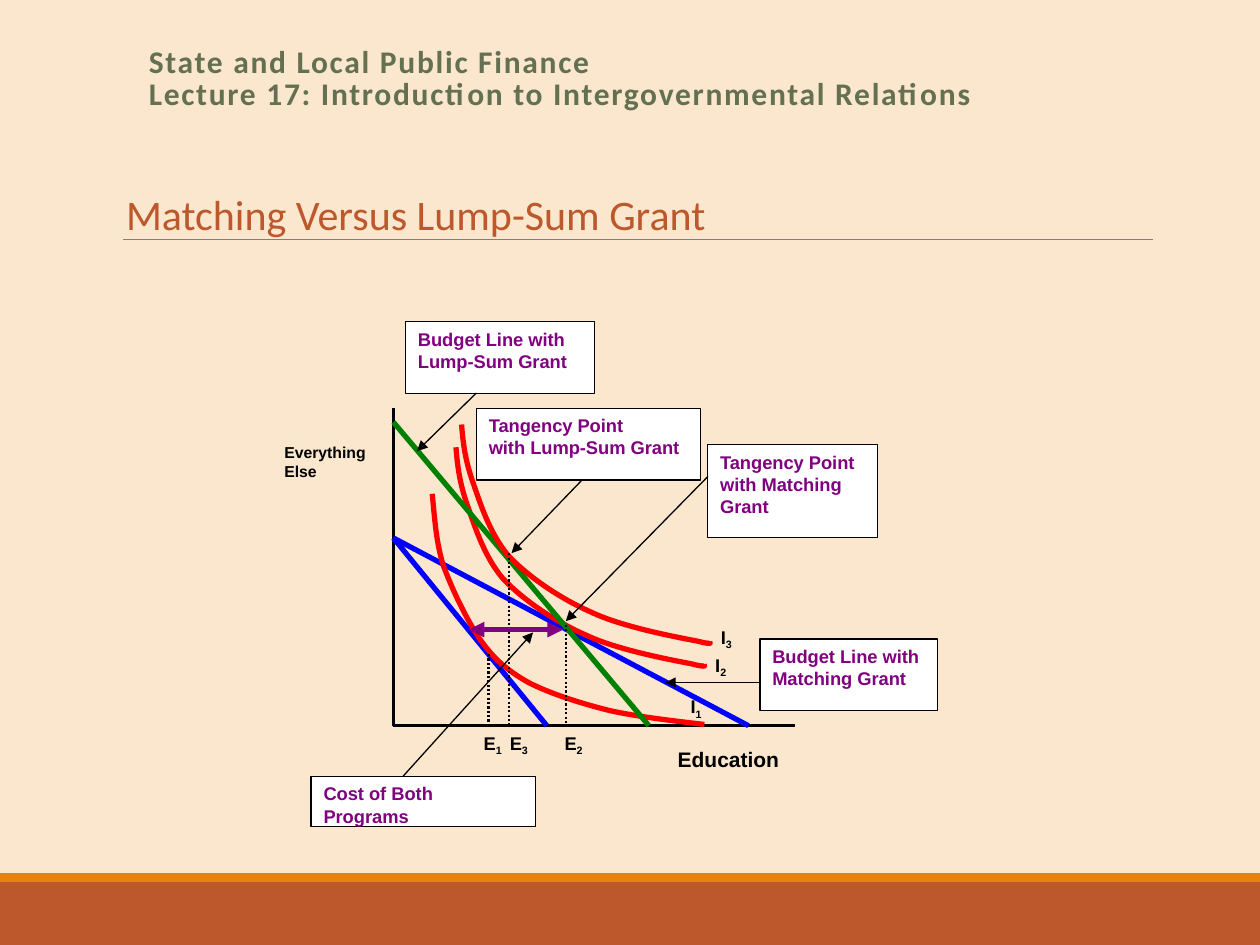
import dataclasses
import pptx
import pptx.util
import pptx.dml.color
import pptx.enum.dml
import pptx.enum.shapes
import pptx.enum.text
import pptx.oxml.ns
import lxml.etree

Pt = pptx.util.Pt
Shape = pptx.enum.shapes.MSO_SHAPE
Anchor = pptx.enum.text.MSO_ANCHOR
Align = pptx.enum.text.PP_ALIGN


@dataclasses.dataclass(frozen=True)
class Theme:
    paper: str = "FBE6CE"
    rust: str = "BD582C"
    orange: str = "E48312"
    olive: str = "637052"
    gray: str = "808080"
    black: str = "000000"
    white: str = "FFFFFF"
    blue: str = "0000FF"
    green: str = "008000"
    red: str = "FF0000"
    purple: str = "800080"
    head: float = 18
    topic: float = 24
    axis: float = 12
    note: float = 10.5
    small: float = 9
    serif: str = "Calibri"
    sans: str = "Arial"


T = Theme()
LEFT, BASE = 224.8, 414.7
KINK = 307.4
LOW = [(247, 282.2), (248.4, 295.9), (249.1, 309.6), (253.4, 323.3),
       (258.5, 337), (266.4, 353.5), (273.6, 364.3),
       (281.5, 375.8), (288.7, 382.3), (301, 389.5),
       (313.2, 396), (331.2, 401.8), (348.5, 406.1),
       (365, 409.7), (383.8, 411.8), (402.5, 414)]
MID = [(260.6, 255.6), (261.4, 266.4), (262.8, 276.5), (267.1, 288.7),
       (271.4, 301), (276.5, 317.5), (287.3, 330.5),
       (298.8, 342.7), (316.8, 355), (334.8, 362.9),
       (352.8, 371.5), (384.5, 377.3), (395.3, 379.4),
       (406.8, 382.3), (401, 379.4), (402.5, 379.4)]
HIGH = [(x + 3.2, y - 13) for x, y in MID]


def color(code):
    return pptx.dml.color.RGBColor.from_string(code)


def child(node, tag, **attrs):
    return lxml.etree.SubElement(node, pptx.oxml.ns.qn(tag), attrs)


def style(font, size, code, name=T.sans, bold=True):
    font.size, font.name, font.bold = Pt(size), name, bold
    font.color.rgb = color(code)


def place(shape, x, y, w, h):
    shape.left, shape.top, shape.width, shape.height = map(Pt, (x, y, w, h))


def rect(slide, x, y, w, h, fill, edge=None):
    shape = slide.shapes.add_shape(Shape.RECTANGLE, *map(Pt, (x, y, w, h)))
    shape.shadow.inherit = False
    shape.fill.solid()
    shape.fill.fore_color.rgb = color(fill)
    if edge:
        shape.line.color.rgb = color(edge)
        shape.line.width = Pt(0.75)
    else:
        shape.line.fill.background()
    return shape


def line(slide, start, end, code, width, dots=False, head=False, tail=False):
    link = slide.shapes.add_connector(
        pptx.enum.shapes.MSO_CONNECTOR.STRAIGHT, *map(Pt, (*start, *end)))
    link.line.color.rgb = color(code)
    link.line.width = Pt(width)
    if dots:
        link.line.dash_style = pptx.enum.dml.MSO_LINE.ROUND_DOT
    stroke = link.line._get_or_add_ln()
    if head:
        child(stroke, "a:headEnd", type="triangle")
    if tail:
        child(stroke, "a:tailEnd", type="triangle")
    child(link._element.spPr, "a:effectLst")
    return link


def bend(shape):
    legs = list(shape._element.iter(pptx.oxml.ns.qn("a:lnTo")))
    track = legs[0].getparent()
    for i in range(0, len(legs), 3):
        arc = child(track, "a:cubicBezTo")
        for leg in legs[i:i + 3]:
            arc.append(leg[0])
            track.remove(leg)


def curve(slide, knots):
    spots = [(Pt(x), Pt(y)) for x, y in knots]
    pen = slide.shapes.build_freeform(*spots[0], scale=1.0)
    pen.add_line_segments(spots[1:], close=False)
    shape = pen.convert_to_shape()
    bend(shape)
    shape.shadow.inherit = False
    shape.fill.background()
    shape.line.color.rgb = color(T.red)
    shape.line.width = Pt(3)


def write(frame, text, size, code):
    frame.word_wrap = True
    frame.vertical_anchor = Anchor.TOP
    frame.text = text
    for para in frame.paragraphs:
        para.alignment = Align.LEFT
        style(para.font, size, code)


def label(slide, x, y, w, h, text, size, sub=None):
    frame = slide.shapes.add_textbox(*map(Pt, (x, y, w, h))).text_frame
    write(frame, text, size, T.black)
    if sub:
        run = frame.paragraphs[0].add_run()
        run.text = sub
        run._r.get_or_add_rPr().set("baseline", "-25000")


def note(slide, x, y, w, h, text):
    box = rect(slide, x, y, w, h, T.white, T.black)
    write(box.text_frame, text, T.note, T.purple)


def decor(slide):
    parts = (rect(slide, 0, 504, 720, 36, T.rust),
             rect(slide, 0, 499, 720, 5, T.orange),
             line(slide, (70.4, 136.8), (658.8, 136.8), T.gray, 0.5))
    tree = slide.slide_layout.shapes._spTree
    for part in parts:
        tree.append(part._element)


def heads(slide):
    title, body = slide.placeholders
    place(title, 77.8, 23.8, 594, 46.8)
    place(body, 64.8, 82.1, 347, 58.3)
    for shape, anchor in ((title, Anchor.TOP), (body, Anchor.BOTTOM)):
        frame = shape.text_frame
        frame.word_wrap = True
        frame.auto_size = pptx.enum.text.MSO_AUTO_SIZE.NONE
        frame.vertical_anchor = anchor
        frame.paragraphs[0].alignment = Align.LEFT
        frame.paragraphs[0].space_before = Pt(0)
    para = title.text_frame.paragraphs[0]
    para.text = ("State and Local Public Finance\v"
                 "Lecture 17: Introduction to Intergovernmental Relations")
    para.line_spacing = 0.85
    style(para.font, T.head, T.olive, T.serif)
    for run in para.runs:
        run._r.get_or_add_rPr().set("spc", "100")
    para = body.text_frame.paragraphs[0]
    para.text = "Matching Versus Lump-Sum Grant"
    style(para.font, T.topic, T.rust, T.serif, False)
    props = para._p.get_or_add_pPr()
    props.set("marL", "0")
    props.set("indent", "0")
    props.insert_element_before(
        lxml.etree.Element(pptx.oxml.ns.qn("a:buNone")), "a:tabLst", "a:defRPr", "a:extLst")


def graph(slide):
    line(slide, (LEFT, 233.3), (LEFT, BASE), T.black, 2)
    line(slide, (LEFT, BASE), (454.3, BASE), T.black, 2)
    for x in (312.5, 427.7):
        line(slide, (LEFT, KINK), (x, BASE), T.blue, 3)
    curve(slide, LOW)
    curve(slide, MID)
    line(slide, (LEFT, 241.2), (370.8, BASE), T.green, 3)
    curve(slide, HIGH)
    for x, y in ((279.2, 373.7), (323.3, 357.1), (290.9, 316.1)):
        line(slide, (x, y), (x, BASE), T.black, 1.25, dots=True)
    label(slide, 380.2, 423.2, 74.2, 24.5, "Education", T.axis)
    label(slide, 155.4, 249.7, 69.8, 33, "Everything\nElse", T.small)
    for x, y, text, sub in ((269.3, BASE, "E", "1"), (284.2, BASE, "E", "3"),
                            (315.5, BASE, "E", "2"), (404.8, 354.2, "I", "3"),
                            (401.6, 370.1, "I", "2"), (387.5, 394, "I", "1")):
        label(slide, x, y, 27.4, 24.5, text, T.note, sub)
    line(slide, (267.8, 359.8), (321.8, 359.8), T.purple, 3, head=True, tail=True)


def notes(slide):
    note(slide, 231.8, 183.8, 108, 41, "Budget Line with\nLump-Sum Grant")
    note(slide, 177.8, 443.7, 128.2, 28.8, "Cost of Both Programs")
    note(slide, 404.4, 254, 97.2, 53.3, "Tangency Point\nwith Matching Grant")
    note(slide, 434.2, 365.2, 101.5, 41, "Budget Line with Matching Grant")
    note(slide, 272.2, 233.3, 128.2, 41, "Tangency Point\nwith Lump-Sum Grant")
    for start, end in (((404.6, 272.2), (323.3, 355)), ((434.2, 390), (380.2, 390)),
                       ((272.2, 224.6), (238.3, 257.8)), ((332.6, 274.3), (292.3, 316.1)),
                       ((230.4, 443.5), (304.6, 361.4))):
        line(slide, start, end, T.black, 0.75, tail=True)


def main():
    deck = pptx.Presentation()
    deck.slide_width, deck.slide_height = Pt(720), Pt(540)
    slide = deck.slides.add_slide(deck.slide_layouts[1])
    slide.background.fill.solid()
    slide.background.fill.fore_color.rgb = color(T.paper)
    decor(slide)
    heads(slide)
    graph(slide)
    notes(slide)
    deck.save("out.pptx")


if __name__ == "__main__":
    main()
